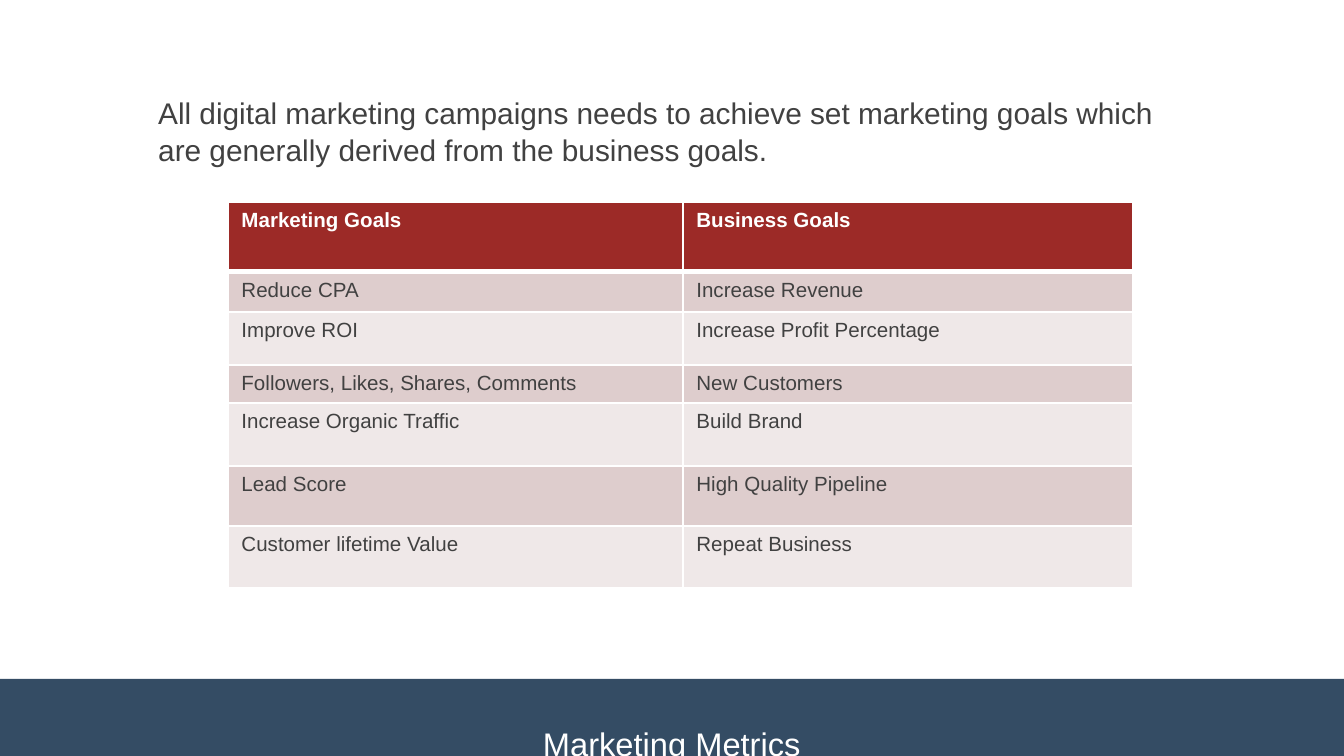
from lxml import etree
from pptx import Presentation
from pptx.dml.color import RGBColor
from pptx.enum.text import MSO_ANCHOR, MSO_AUTO_SIZE, PP_ALIGN
from pptx.oxml.ns import qn
from pptx.util import Emu, Pt

TOP = MSO_ANCHOR.TOP
NO_FIT = MSO_AUTO_SIZE.NONE
CENTER = PP_ALIGN.CENTER
LEFT = PP_ALIGN.LEFT

SLIDE_WIDTH, SLIDE_HEIGHT = 1344, 756
SCALE = 9144000 / SLIDE_WIDTH
TITLE_ONLY = 5
COLORS = {
    "white": "FFFFFF",
    "text": "414141",
    "band": "1B3651",
    "header": "9C2A27",
    "odd": "DECDCD",
    "even": "EFE8E8",
}
INTRO = ("All digital marketing campaigns needs to achieve set marketing goals "
         "which are generally derived from the business goals.")
GOALS = [
    ("Marketing Goals", "Business Goals"),
    ("Reduce CPA", "Increase Revenue"),
    ("Improve ROI", "Increase Profit Percentage"),
    ("Followers, Likes, Shares, Comments", "New Customers"),
    ("Increase Organic Traffic", "Build Brand"),
    ("Lead Score", "High Quality Pipeline"),
    ("Customer lifetime Value", "Repeat Business"),
]
COLUMN_WIDTHS = [455, 450]
ROW_HEIGHTS = [70, 40, 53, 38, 63, 60, 62]


def px(length):
    """Turn px into EMU."""
    return Emu(round(length * SCALE))


def apply(target, formats):
    """Set each attribute of the target from a dict of format values."""
    for attribute, value in formats.items():
        setattr(target, attribute, value)


def fill_solid(fill, color):
    """Give a fill one of the named colours."""
    fill.solid()
    fill.fore_color.rgb = RGBColor.from_string(COLORS[color])


def write(frame, text, size, color, bold=False, align=LEFT, spacing=1.0):
    """Write one formatted paragraph into a text frame."""
    paragraph = frame.paragraphs[0]
    apply(paragraph, {"alignment": align, "line_spacing": spacing})
    run = paragraph.add_run()
    run.text = text
    apply(run.font, {"name": "Arial", "size": Pt(size), "bold": bold})
    run.font.color.rgb = RGBColor.from_string(COLORS[color])


def add_border(cell, side, width):
    """Draw a white border of the given points on one side of a cell."""
    line = etree.SubElement(cell._tc.get_or_add_tcPr(), qn(f"a:ln{side}"), w=str(Pt(width)))
    solid = etree.SubElement(line, qn("a:solidFill"))
    etree.SubElement(solid, qn("a:srgbClr"), val=COLORS["white"])


def add_title_band(slide, left, top, width, height):
    """Turn the title placeholder into the band at the foot of the slide."""
    title = slide.shapes.title
    apply(title, {"left": px(left), "top": px(top), "width": px(width), "height": px(height)})
    fill_solid(title.fill, "band")
    band_color = title.fill._xPr.find(qn("a:solidFill"))[0]
    etree.SubElement(band_color, qn("a:alpha"), val="89000")
    apply(title.text_frame, {
        "auto_size": NO_FIT, "vertical_anchor": TOP, "word_wrap": True,
        "margin_top": px(45), "margin_bottom": 0,
    })
    write(title.text_frame, "Marketing Metrics", 17.5, "white", align=CENTER)


def add_intro(slide, left, top, width, height):
    """Add the introductory sentence above the table."""
    intro = slide.shapes.add_textbox(px(left), px(top), px(width), px(height))
    intro.text_frame.word_wrap = True
    write(intro.text_frame, INTRO, 16, "text", spacing=1.05)


def add_goals_table(slide, left, top, width, height):
    """Add the table that sets marketing goals beside business goals."""
    goals = slide.shapes.add_table(
        len(GOALS), len(COLUMN_WIDTHS), px(left), px(top), px(width), px(height)).table
    for column, column_width in zip(goals.columns, COLUMN_WIDTHS):
        column.width = px(column_width)
    for row, row_height in zip(goals.rows, ROW_HEIGHTS):
        row.height = px(row_height)
    for row_index, labels in enumerate(GOALS):
        is_header = row_index == 0
        row_color = "header" if is_header else ("even", "odd")[row_index % 2]
        borders = {"L": 1, "R": 1, "T": 3 if row_index == 1 else 1, "B": 3 if is_header else 1}
        for column_index, label in enumerate(labels):
            cell = goals.cell(row_index, column_index)
            for side, border_width in borders.items():
                add_border(cell, side, border_width)
            fill_solid(cell.fill, row_color)
            write(cell.text_frame, label, 11, "white" if is_header else "text", bold=is_header)


def main():
    """Build the slide and save it."""
    presentation = Presentation()
    apply(presentation, {"slide_width": px(SLIDE_WIDTH), "slide_height": px(SLIDE_HEIGHT)})
    slide = presentation.slides.add_slide(presentation.slide_layouts[TITLE_ONLY])
    add_title_band(slide, 0, 679, SLIDE_WIDTH, 79)
    add_intro(slide, 145, 86, 1071, 122)
    add_goals_table(slide, 228, 202, sum(COLUMN_WIDTHS), sum(ROW_HEIGHTS))
    presentation.save("out.pptx")


if __name__ == "__main__":
    main()
